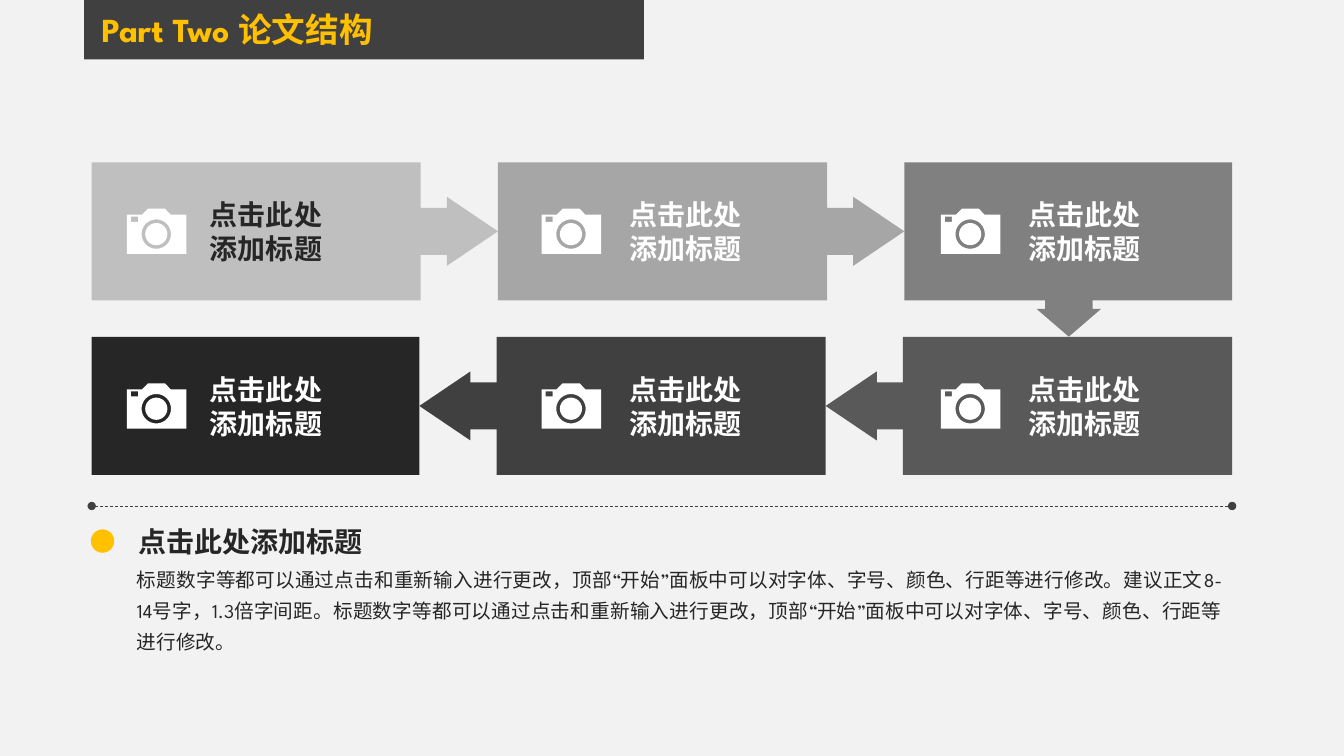
from math import cos, pi, sin

from lxml.etree import SubElement
from pptx import Presentation
from pptx.dml.color import RGBColor
from pptx.enum.dml import MSO_LINE_DASH_STYLE as Dash
from pptx.enum.shapes import MSO_CONNECTOR as Connector, MSO_SHAPE as Shape
from pptx.enum.text import MSO_ANCHOR as Anchor, MSO_AUTO_SIZE as AutoSize, PP_ALIGN as Align
from pptx.oxml.ns import qn
from pptx.util import Cm, Pt

BACKGROUND = RGBColor(0xF2, 0xF2, 0xF2)
WHITE = RGBColor(0xFF, 0xFF, 0xFF)
SILVER = RGBColor(0xBF, 0xBF, 0xBF)
LIGHT_GRAY = RGBColor(0xA6, 0xA6, 0xA6)
GRAY = RGBColor(0x80, 0x80, 0x80)
DIM_GRAY = RGBColor(0x59, 0x59, 0x59)
DARK = RGBColor(0x40, 0x40, 0x40)
INK = RGBColor(0x26, 0x26, 0x26)
YELLOW = RGBColor(0xFF, 0xC0, 0x00)

LEFT, RIGHT = 2.31, 31.05
RECT_WIDTH, CALLOUT_WIDTH, BOX_HEIGHT = 8.26, 10.24, 3.48
ROW_TOPS = (4.09, 8.49)
CAMERA_LEFTS = (3.2, 13.65, 23.71)
LABEL_LEFTS = (5.03, 15.6, 25.65)
BOX_COLORS = ((SILVER, LIGHT_GRAY, GRAY), (INK, DARK, DIM_GRAY))

CALLOUT_ADJUSTMENTS = (0.34, 0.25, 0.37, 0.81)
LENS_X, LENS_Y, RING_RADIUS, LENS_RADIUS = 0.74, 0.64, 0.37, 0.28
CAMERA_BODY = [(1.1, 0.15), (0.96, 0), (0.53, 0), (0.38, 0.15),
               (0, 0.15), (0, 1.14), (1.5, 1.14), (1.5, 0.15)]
CAMERA_FLASH = [(0.1, 0.2), (0.28, 0.2), (0.28, 0.33), (0.1, 0.33)]
CAMERA_RING = [(LENS_X + RING_RADIUS * cos(step * pi / 24),
                LENS_Y + RING_RADIUS * sin(step * pi / 24)) for step in range(48)]

BODY_TEXT = (
    "标题数字等都可以通过点击和重新输入进行更改，顶部“开始”面板中可以对字体、字号、颜色、行距等进行修改。"
    "建议正文8-14号字，1.3倍字间距。"
    "标题数字等都可以通过点击和重新输入进行更改，顶部“开始”面板中可以对字体、字号、颜色、行距等进行修改。"
)


class SlideBuilder:
    font = "League Spartan"

    def __init__(self, slide):
        self.slide = slide
        self.shapes = slide.shapes
        fill = slide.background.fill
        fill.solid()
        fill.fore_color.rgb = BACKGROUND

    def paint(self, shape, color):
        shape.shadow.inherit = False
        shape.fill.solid()
        shape.fill.fore_color.rgb = color
        shape.line.fill.background()
        return shape

    def start_group(self):
        self.shapes = self.slide.shapes.add_group_shape().shapes

    def end_group(self):
        self.shapes = self.slide.shapes

    def shape(self, kind, left, top, width, height, color, adjustments=()):
        shape = self.shapes.add_shape(kind, Cm(left), Cm(top), Cm(width), Cm(height))
        for index, value in enumerate(adjustments):
            shape.adjustments[index] = value
        return self.paint(shape, color)

    def text(self, lines, left, top, width, height, color, size=20, bold=True,
             frame_format=None, **paragraph_format):
        box = self.shapes.add_textbox(Cm(left), Cm(top), Cm(width), Cm(height))
        frame_values = {"word_wrap": False, "auto_size": AutoSize.SHAPE_TO_FIT_TEXT}
        for name, value in {**frame_values, **(frame_format or {})}.items():
            setattr(box.text_frame, name, value)
        box.text_frame.text = "\n".join(lines)
        for paragraph in box.text_frame.paragraphs:
            for name, value in {"alignment": Align.CENTER, **paragraph_format}.items():
                setattr(paragraph, name, value)
            font = paragraph.runs[0].font
            for name, value in {"name": self.font, "size": Pt(size), "bold": bold}.items():
                setattr(font, name, value)
            font.color.rgb = color
            properties = paragraph.runs[0]._r.get_or_add_rPr()
            SubElement(properties, qn("a:ea"), typeface=self.font)

    def camera(self, left, top):
        outlines = [[(Cm(left + x), Cm(top + y)) for x, y in outline]
                    for outline in (CAMERA_BODY, CAMERA_FLASH, CAMERA_RING)]
        builder = self.shapes.build_freeform(*outlines[0][0])
        builder.add_line_segments(outlines[0][1:])
        for outline in outlines[1:]:
            builder.move_to(*outline[0])
            builder.add_line_segments(outline[1:])
        self.paint(builder.convert_to_shape(), WHITE)
        self.shape(Shape.OVAL, left + LENS_X - LENS_RADIUS, top + LENS_Y - LENS_RADIUS,
                   2 * LENS_RADIUS, 2 * LENS_RADIUS, WHITE)

    def step(self, row, column):
        top, color = ROW_TOPS[row], BOX_COLORS[row][column]
        self.start_group()
        if row == 0:
            left, is_callout = LEFT + column * CALLOUT_WIDTH, column < 2
        else:
            left, is_callout = RIGHT - (3 - column) * CALLOUT_WIDTH, column > 0
        if is_callout:
            box = self.shape(Shape.RIGHT_ARROW_CALLOUT, left, top, CALLOUT_WIDTH,
                             BOX_HEIGHT, color, CALLOUT_ADJUSTMENTS)
            if row == 1:
                box._element.spPr.find(qn("a:xfrm")).set("flipH", "1")
        else:
            self.shape(Shape.RECTANGLE, max(left, LEFT), top, RECT_WIDTH, BOX_HEIGHT, color)
        self.camera(CAMERA_LEFTS[column], top + 1.17)
        self.text(("点击此处", "添加标题"), LABEL_LEFTS[column], top + 0.77, 3.35, 1.96,
                  INK if color == SILVER else WHITE)
        self.end_group()

    def divider(self, left, right, y, color):
        line = self.shapes.add_connector(Connector.STRAIGHT, Cm(left), Cm(y), Cm(right), Cm(y))
        for name, value in {"width": Pt(0.5), "dash_style": Dash.DASH}.items():
            setattr(line.line, name, value)
        line.line.color.rgb = color
        outline = line.line._get_or_add_ln()
        for end in ("a:headEnd", "a:tailEnd"):
            SubElement(outline, qn(end), type="oval")
        SubElement(line._element.spPr, qn("a:effectLst"))


def main():
    presentation = Presentation()
    presentation.slide_width, presentation.slide_height = Cm(33.87), Cm(19.05)
    builder = SlideBuilder(presentation.slides.add_slide(presentation.slide_layouts[6]))

    builder.shape(Shape.RECTANGLE, 2.12, 0, 14.11, 1.5, DARK)
    builder.text(("Part Two 论文结构",), 2.31, 0.15, 9.53, 1.27, YELLOW, size=24,
                 frame_format={"word_wrap": True, "auto_size": AutoSize.NONE,
                               "vertical_anchor": Anchor.MIDDLE},
                 alignment=Align.LEFT, line_spacing=0.9)

    down_arrow = builder.shape(Shape.RIGHT_ARROW, 26.47, 7.21, 0.93, 1.62, GRAY, (0.74, 0.75))
    down_arrow.rotation = 90
    builder.divider(LEFT, RIGHT, 12.75, DARK)
    for row in range(2):
        for column in range(3):
            builder.step(row, column)

    builder.text(("点击此处添加标题",), 3.2, 13.08, 6.22, 1.11, INK)
    builder.text((BODY_TEXT,), 3.2, 14.02, 27.85, 2.6, INK, size=14, bold=False,
                 frame_format={"word_wrap": True},
                 alignment=Align.JUSTIFY, line_spacing=1.3)
    builder.shape(Shape.OVAL, 2.29, 13.34, 0.59, 0.59, YELLOW)
    presentation.save("out.pptx")


if __name__ == "__main__":
    main()
